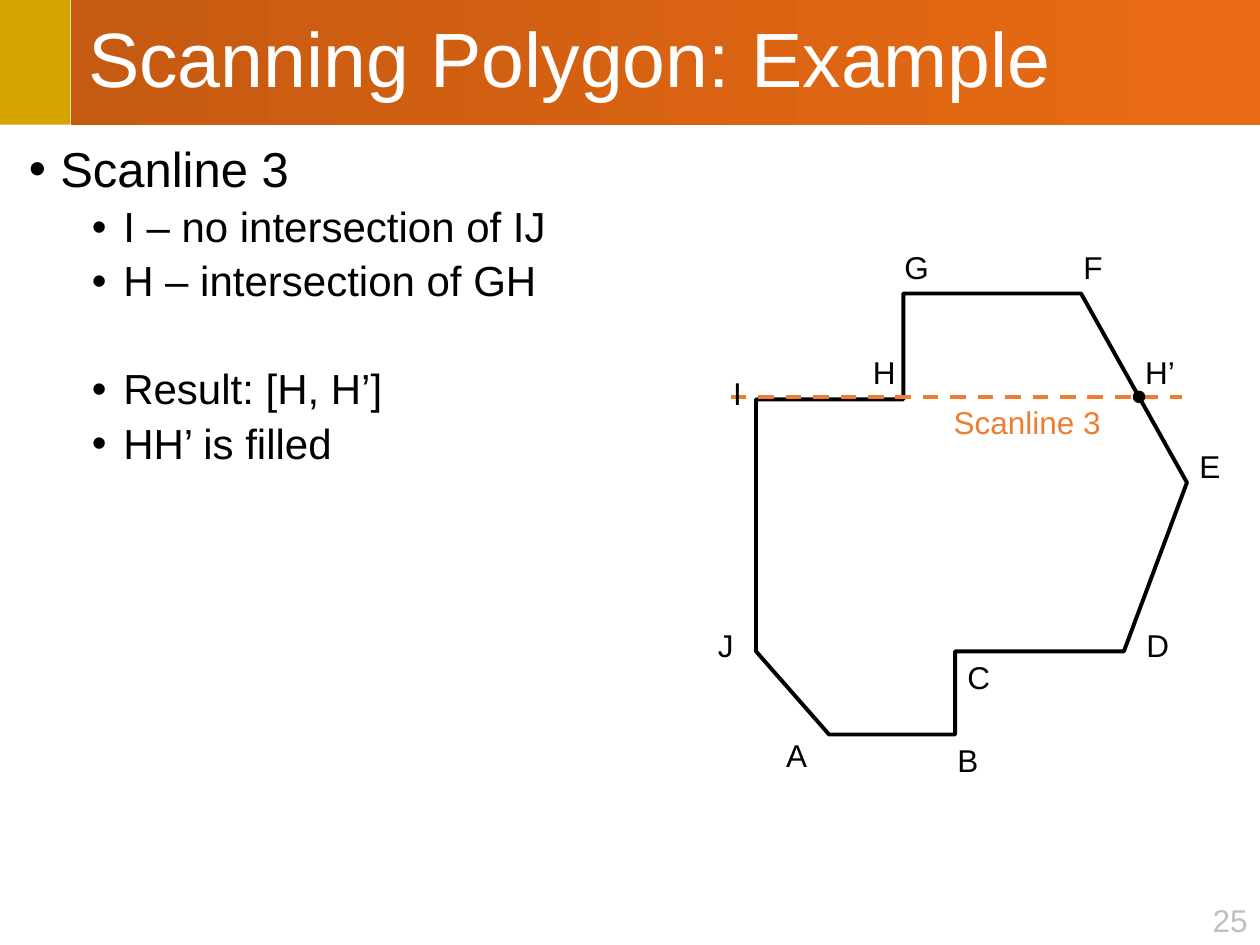
from lxml import etree
from pptx import Presentation, util as u
from pptx.dml.color import RGBColor
from pptx.enum import dml, shapes, text
from pptx.oxml.ns import qn

FONT = "Arial"
BLACK, WHITE, ORANGE, GOLD, GREY = "000000", "FFFFFF", "ED7D31", "D6A300", "BFBFBF"
BANNER_START, BANNER_END = "C55A11", "EA6B14"
BAND_HEIGHT, BAND_SPLIT = 0.99, 0.56
SCAN_Y = 3.15
LABEL_HEIGHT = 0.4

POLYGON = {
    "A": (6.58, 5.83), "B": (7.58, 5.83), "C": (7.58, 5.17), "D": (8.92, 5.17),
    "E": (9.42, 3.83), "F": (8.58, 2.33), "G": (7.17, 2.33), "H": (7.17, 3.17),
    "I": (6, 3.17), "J": (6, 5.17),
}
VERTEX_LABELS = {
    "A": (6.14, 5.79, 0.38), "B": (7.5, 5.83, 0.38), "C": (7.58, 5.17, 0.38),
    "D": (9, 4.92, 0.38), "E": (9.42, 3.5, 0.37), "F": (8.5, 1.92, 0.35),
    "G": (7.08, 1.92, 0.4), "H": (6.83, 2.75, 0.38), "I": (5.72, 2.92, 0.27),
    "J": (5.6, 4.92, 0.34), "H’": (8.99, 2.75, 0.44),
}
NOTES = [
    ("Scanline 3", 0, 10),
    ("I – no intersection of IJ", 1, 5),
    ("H – intersection of GH", 1, 5),
    ("Result: [H, H’]", 1, 35.86),
    ("HH’ is filled", 1, 5),
]


def color(hex_code):
    """Turn a hex string into a colour."""
    return RGBColor.from_string(hex_code)


def inches(*lengths):
    """Turn lengths in inches into slide units."""
    return [u.Inches(length) for length in lengths]


def add_run(paragraph, words, size, ink):
    """Append one formatted run to a paragraph."""
    run = paragraph.add_run()
    run.text = words
    run.font.size, run.font.name = u.Pt(size), FONT
    run.font.color.rgb = color(ink)


def add_label(slide, words, left, top, width, ink=BLACK, align=text.PP_ALIGN.LEFT):
    """Add a one-line label."""
    label = slide.shapes.add_textbox(*inches(left, top, width, LABEL_HEIGHT))
    label.text_frame.word_wrap = False
    paragraph = label.text_frame.paragraphs[0]
    paragraph.alignment = align
    add_run(paragraph, words, 18, ink)


def add_solid(slide, kind, box, fill):
    """Add a plain filled preset shape."""
    solid = slide.shapes.add_shape(kind, *inches(*box))
    solid.shadow.inherit = False
    solid.fill.solid()
    solid.fill.fore_color.rgb = color(fill)
    solid.line.fill.background()


def format_title(slide, words):
    """Place the title on its gradient banner."""
    title = slide.shapes.title
    title.left, title.top, title.width, title.height = inches(
        BAND_SPLIT, 0, 10 - BAND_SPLIT, BAND_HEIGHT)
    title.fill.gradient()
    title.fill.gradient_angle = 0
    for stop, shade in zip(title.fill.gradient_stops, (BANNER_START, BANNER_END)):
        stop.color.rgb = color(shade)
    frame = title.text_frame
    frame.vertical_anchor = text.MSO_ANCHOR.MIDDLE
    frame.auto_size = text.MSO_AUTO_SIZE.NONE
    paragraph = frame.paragraphs[0]
    paragraph.alignment, paragraph.line_spacing = text.PP_ALIGN.LEFT, 0.9
    paragraph._p.get_or_add_pPr().set("marL", str(u.Inches(0.04)))
    add_run(paragraph, words, 44, WHITE)


def add_notes(slide):
    """Add the two-level bulleted notes."""
    frame = slide.shapes.add_textbox(*inches(0.13, 1.1, 9.75, 5.98)).text_frame
    frame.word_wrap = True
    for index, (words, level, gap) in enumerate(NOTES):
        paragraph = frame.add_paragraph() if index else frame.paragraphs[0]
        paragraph.level, paragraph.line_spacing = level, 0.9
        paragraph.space_before = u.Pt(gap)
        props = paragraph._p.get_or_add_pPr()
        props.set("marL", str(u.Inches(0.25 + 0.5 * level)))
        props.set("indent", str(u.Inches(-0.25)))
        etree.SubElement(props, qn("a:buFont")).set("typeface", FONT)
        etree.SubElement(props, qn("a:buChar")).set("char", "•")
        add_run(paragraph, words, 28 - 4 * level, BLACK)


def add_polygon(slide):
    """Draw the outline through the polygon's vertices."""
    start, *rest = [inches(*vertex) for vertex in POLYGON.values()]
    builder = slide.shapes.build_freeform(*start)
    builder.add_line_segments(rest, close=True)
    outline = builder.convert_to_shape()
    outline.shadow.inherit = False
    outline.fill.background()
    outline.line.color.rgb = color(BLACK)
    outline.line.width = u.Pt(2.25)
    etree.SubElement(outline.line._get_or_add_ln(), qn("a:round"))


def add_scanline(slide):
    """Draw the dashed scanline with its caption and crossing point."""
    scanline = slide.shapes.add_connector(
        shapes.MSO_CONNECTOR.STRAIGHT, *inches(5.8, SCAN_Y, 9.38, SCAN_Y))
    scanline.line.color.rgb = color(ORANGE)
    scanline.line.width = u.Pt(2.25)
    scanline.line.dash_style = dml.MSO_LINE.DASH
    etree.SubElement(scanline._element.spPr, qn("a:effectLst"))
    add_label(slide, "Scanline 3", 7.47, SCAN_Y, 1.38, ORANGE)
    add_solid(slide, shapes.MSO_SHAPE.OVAL, (8.99, SCAN_Y - 0.05, 0.1, 0.1), BLACK)


def main():
    """Build and save the slide."""
    deck = Presentation()
    deck.slide_width, deck.slide_height = inches(10, 7.5)
    slide = deck.slides.add_slide(deck.slide_layouts[5])
    add_solid(slide, shapes.MSO_SHAPE.RECTANGLE, (0, 0, BAND_SPLIT, BAND_HEIGHT), GOLD)
    format_title(slide, "Scanning Polygon: Example")
    add_notes(slide)
    add_polygon(slide)
    add_scanline(slide)
    for name, place in VERTEX_LABELS.items():
        add_label(slide, name, *place)
    add_label(slide, "25", 9.49, 7.1, 0.51, GREY, text.PP_ALIGN.RIGHT)
    deck.save("out.pptx")


if __name__ == "__main__":
    main()
